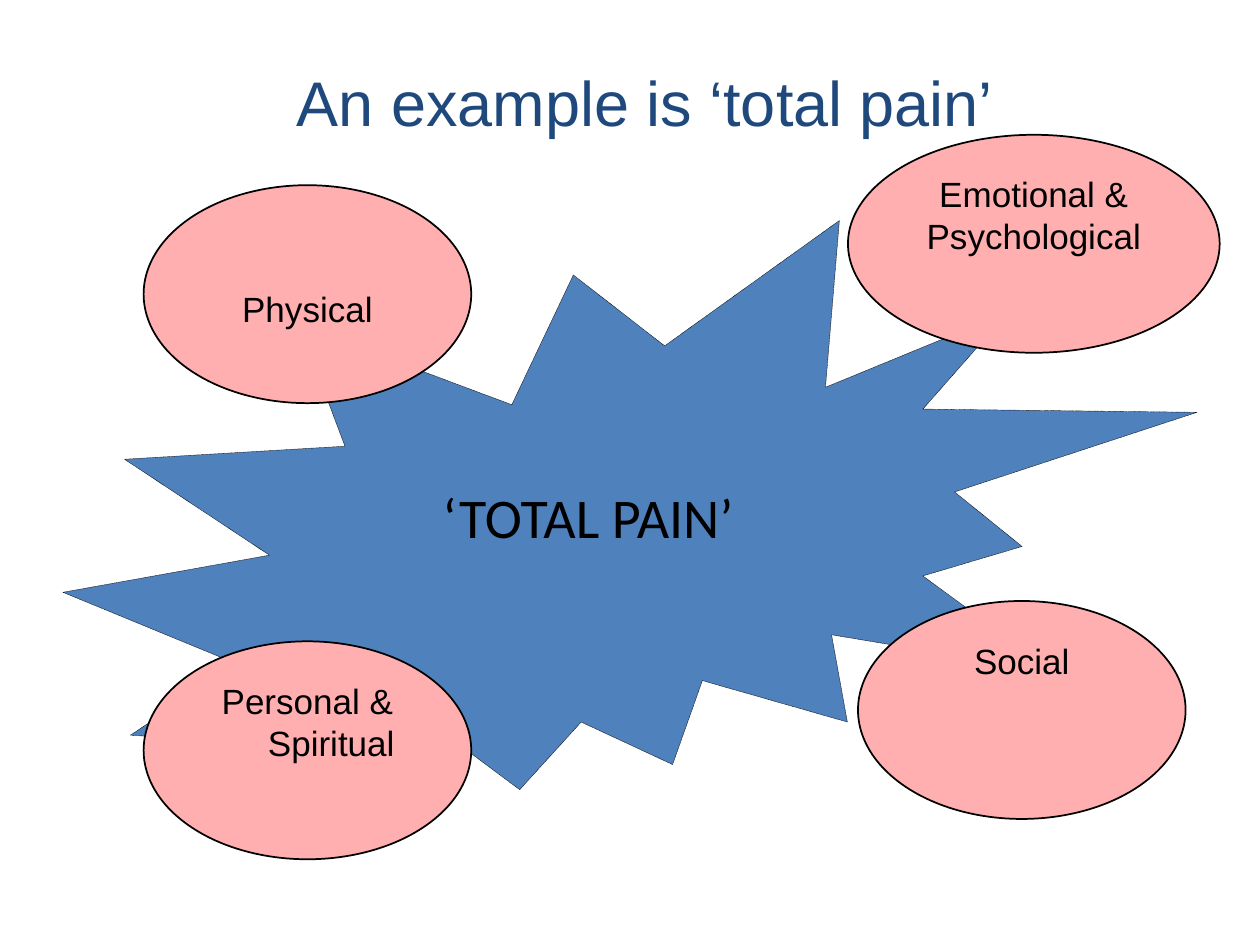
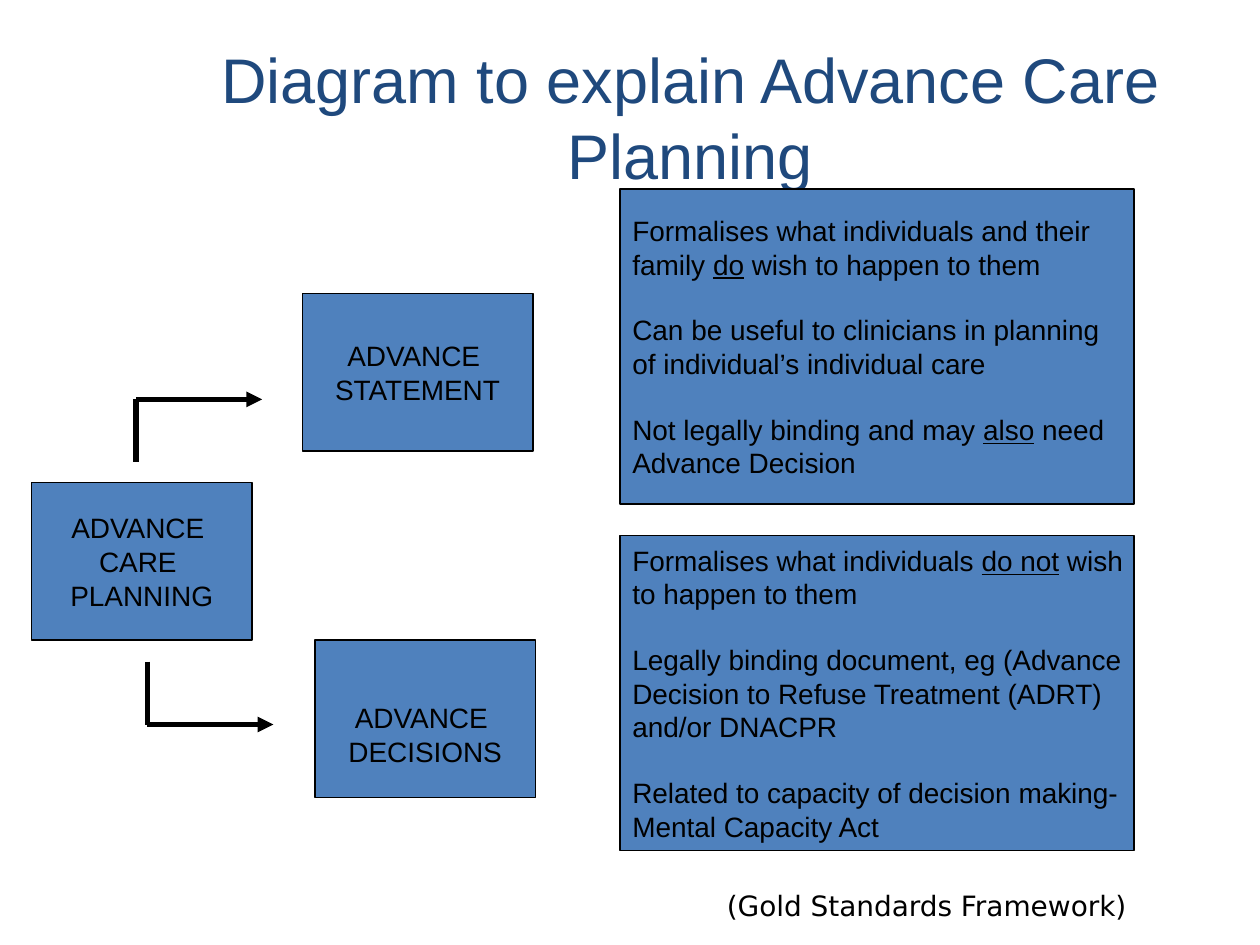
from dataclasses import dataclass

from lxml.etree import SubElement
from pptx import Presentation
from pptx.dml.color import RGBColor
from pptx.enum.dml import MSO_LINE
from pptx.enum.shapes import MSO_CONNECTOR, MSO_SHAPE
from pptx.enum.text import MSO_ANCHOR, MSO_AUTO_SIZE, PP_ALIGN
from pptx.oxml.ns import qn
from pptx.util import Emu, Pt

PX_PER_INCH = 100
EMU_PER_PX = 914400 // PX_PER_INCH
BLACK, NAVY, BLUE, PINK = "000000", "1F497D", "4F81BD", "FFAFAF"
HANGING = 38  # hanging indent in px
GROUP_GAP = 18.4  # points between groups of lines


def px(length: int) -> Emu:
    return Emu(length * EMU_PER_PX)


def rgb(value: str) -> RGBColor:
    return RGBColor.from_string(value)


@dataclass(frozen=True)
class Panel:
    """A filled shape; each group holds lines, with _underlined_ words."""
    x: int
    y: int
    w: int
    h: int
    groups: tuple[tuple[str, ...], ...]
    outline: MSO_SHAPE = MSO_SHAPE.RECTANGLE
    fill: str = BLUE
    border: float = 0.75
    size: int = 16
    font: str = "Arial"
    align: PP_ALIGN = PP_ALIGN.CENTER
    top_inset: int = 5
    hanging: bool = False


@dataclass(frozen=True)
class Stroke:
    x1: int
    y1: int
    x2: int
    y2: int
    arrow: bool = False


def style_font(font, size: int, name: str, color: str) -> None:
    font.size = Pt(size)
    font.name = name
    font.color.rgb = rgb(color)


def add_titled_slide(deck, title: str, x: int, y: int, w: int, h: int):
    slide = deck.slides.add_slide(deck.slide_layouts[5])
    heading = slide.shapes.title
    heading.left, heading.top, heading.width, heading.height = map(px, (x, y, w, h))
    frame = heading.text_frame
    frame.text = title
    frame.auto_size = MSO_AUTO_SIZE.NONE
    frame.vertical_anchor = MSO_ANCHOR.MIDDLE
    frame.paragraphs[0].alignment = PP_ALIGN.CENTER
    style_font(frame.paragraphs[0].runs[0].font, 36, "Arial", NAVY)
    return slide


def draw_panel(slide, panel: Panel):
    shape = slide.shapes.add_shape(
        panel.outline, px(panel.x), px(panel.y), px(panel.w), px(panel.h))
    shape.shadow.inherit = False
    shape.fill.solid()
    shape.fill.fore_color.rgb = rgb(panel.fill)
    shape.line.color.rgb = rgb(BLACK)
    shape.line.width = Pt(panel.border)

    frame = shape.text_frame
    frame.word_wrap = panel.hanging
    frame.vertical_anchor = MSO_ANCHOR.TOP if panel.hanging else MSO_ANCHOR.MIDDLE
    frame.margin_top = px(panel.top_inset)
    frame.text = "\n".join(line for group in panel.groups for line in group)
    group_starts = {sum(map(len, panel.groups[:i])) for i in range(1, len(panel.groups))}
    for index, paragraph in enumerate(frame.paragraphs):
        if panel.hanging:
            properties = paragraph._p.get_or_add_pPr()
            properties.set("marL", str(px(HANGING)))
            properties.set("indent", str(-px(HANGING)))
        paragraph.alignment = panel.align
        if index in group_starts:
            paragraph.space_before = Pt(GROUP_GAP)
        # Every second piece between underscores is underlined
        first, *rest = paragraph.text.split("_")
        paragraph.runs[0].text = first
        for piece in rest:
            paragraph.add_run().text = piece
        for position, run in enumerate(paragraph.runs):
            style_font(run.font, panel.size, panel.font, BLACK)
            if position % 2:
                run.font.underline = True
    return shape


def draw_stroke(slide, stroke: Stroke) -> None:
    connector = slide.shapes.add_connector(
        MSO_CONNECTOR.STRAIGHT,
        px(stroke.x1), px(stroke.y1), px(stroke.x2), px(stroke.y2))
    connector.line.color.rgb = rgb(BLACK)
    connector.line.width = Pt(3)
    properties = connector.element.spPr
    if stroke.arrow:
        SubElement(properties.find(qn("a:ln")), qn("a:tailEnd"), type="triangle")
    SubElement(properties, qn("a:effectLst"))


def domain(x: int, y: int, label: tuple[str, ...], w: int = 260,
           top_inset: int = 5) -> Panel:
    """One kind of pain around the burst."""
    return Panel(x, y, w, 173, (label,), MSO_SHAPE.OVAL, PINK, 1, 20,
                 top_inset=top_inset, hanging=True)


def explanation(y: int, groups: tuple[tuple[str, ...], ...]) -> Panel:
    """What one branch of advance care planning means."""
    return Panel(492, y, 408, 250, groups, align=PP_ALIGN.LEFT)


# Slide 1: total pain and its four domains
TOTAL_PAIN = Panel(50, 175, 900, 495, (("‘TOTAL PAIN’",),),
                   MSO_SHAPE.EXPLOSION2, border=0.25, size=32, font="Calibri",
                   top_inset=62, hanging=True)
DOMAINS = (
    domain(681, 477, ("Social",)),
    domain(673, 107, ("Emotional &", "Psychological"), w=295),
    domain(114, 509, ("Personal & Spiritual",)),
    domain(114, 147, ("Physical",), top_inset=56),
)

# Slide 2: advance care planning and its two branches
PLANNING_PANELS = (
    Panel(25, 383, 175, 125, (("ADVANCE ", "CARE ", "PLANNING"),)),
    Panel(240, 233, 183, 125, (("ADVANCE ", "STATEMENT"),)),
    Panel(250, 508, 175, 125, (("ADVANCE ", "DECISIONS"),),
          top_inset=48, hanging=True),
    explanation(150, (
        ("Formalises what individuals and their",
         "family _do_ wish to happen to them"),
        ("Can be useful to clinicians in planning",
         "of individual’s individual care"),
        ("Not legally binding and may _also_ need",
         "Advance Decision"),
    )),
    explanation(425, (
        ("Formalises what individuals _do not_ wish",
         "to happen to them"),
        ("Legally binding document, eg (Advance",
         "Decision to Refuse Treatment (ADRT)",
         "and/or DNACPR"),
        ("Related to capacity of decision making-",
         "Mental Capacity Act"),
    )),
)
BRANCH_STROKES = (
    Stroke(108, 317, 208, 317, arrow=True),
    Stroke(117, 575, 217, 575, arrow=True),
    Stroke(108, 317, 108, 367),
    Stroke(117, 525, 117, 575),
)


def build_total_pain(deck) -> None:
    slide = add_titled_slide(deck, "An example is ‘total pain’", 138, 18, 748, 125)
    burst = draw_panel(slide, TOTAL_PAIN)
    burst.line.dash_style = MSO_LINE.ROUND_DOT
    for pain_domain in DOMAINS:
        draw_panel(slide, pain_domain)


def build_care_planning(deck) -> None:
    slide = add_titled_slide(
        deck, "Diagram to explain Advance Care Planning", 146, 30, 804, 125)

    # Source credit
    credit = slide.shapes.add_textbox(px(567), px(700), px(392), px(37)).text_frame
    credit.word_wrap = True
    credit.text = "(Gold Standards Framework)"
    style_font(credit.paragraphs[0].runs[0].font, 16, "DejaVu Sans", BLACK)

    for panel in PLANNING_PANELS:
        draw_panel(slide, panel)
    for stroke in BRANCH_STROKES:
        draw_stroke(slide, stroke)


def main() -> None:
    deck = Presentation()
    deck.slide_width, deck.slide_height = px(1000), px(750)
    build_total_pain(deck)
    build_care_planning(deck)
    deck.save("out.pptx")


if __name__ == "__main__":
    main()
